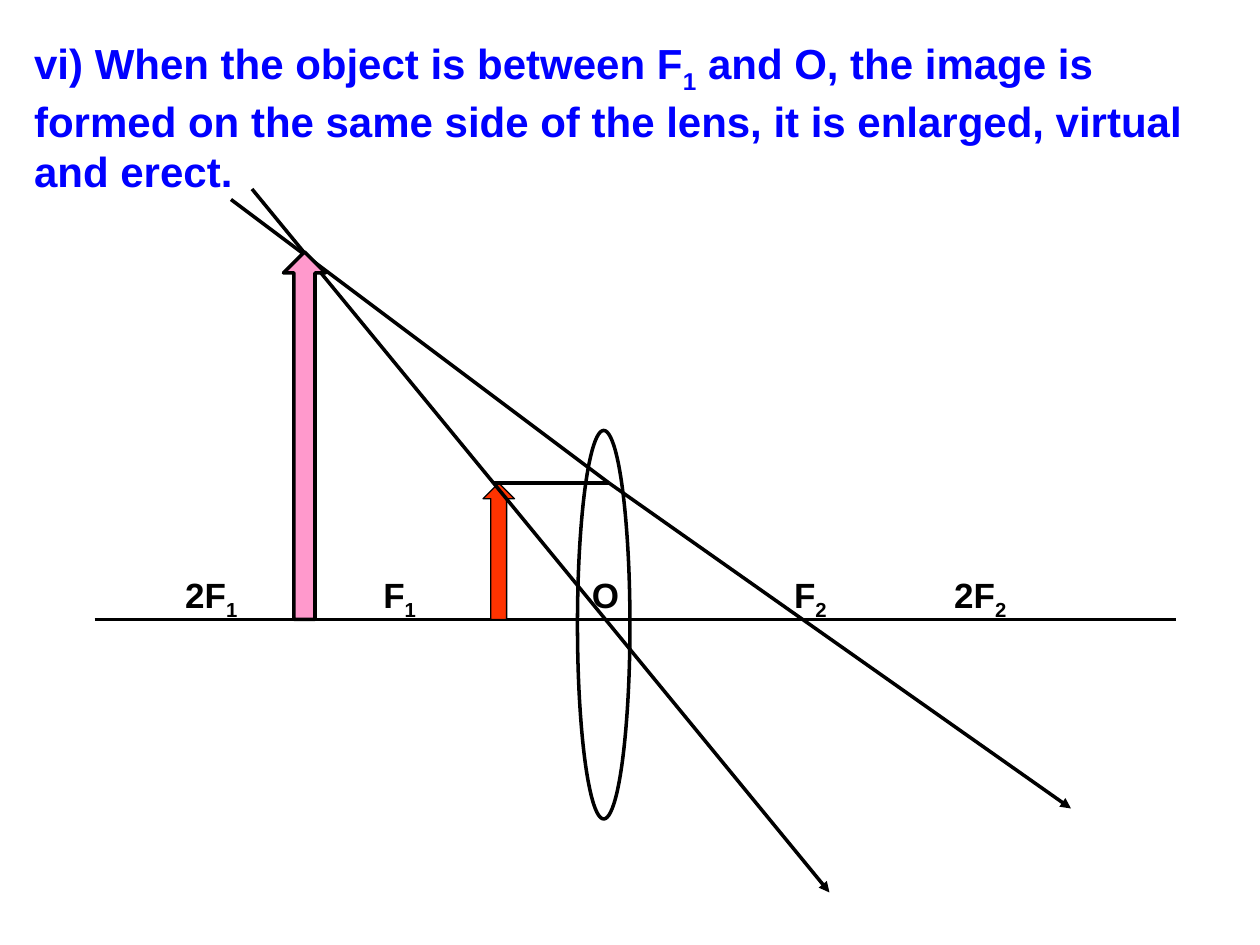
from dataclasses import dataclass

from lxml import etree
from pptx import Presentation
from pptx.dml.color import RGBColor
from pptx.enum.shapes import MSO_CONNECTOR, MSO_SHAPE
from pptx.oxml.ns import qn
from pptx.util import Pt

PX = 9525
STRAIGHT = MSO_CONNECTOR.STRAIGHT
ELLIPSE = MSO_SHAPE.OVAL
UP_ARROW = MSO_SHAPE.UP_ARROW


@dataclass(frozen=True)
class Theme:
    font: str = "Arial"
    heading: str = "0000FF"
    ink: str = "000000"
    object_fill: str = "FF3300"
    image_fill: str = "FF99CC"
    heading_size: int = 24
    label_size: int = 20
    thin: float = 0.75
    thick: float = 2


def write(frame, text, *, font, size, color, before=0):
    paragraph = frame.paragraphs[0]
    paragraph.space_before = Pt(before)
    for index, part in enumerate(text.split("_")):
        if not part:
            continue
        run = paragraph.add_run()
        run.text = part
        run.font.name = font
        run.font.size = Pt(size)
        run.font.bold = True
        run.font.color.rgb = RGBColor.from_string(color)
        if index % 2:
            run.font._element.set("baseline", "-25000")


class Diagram:
    def __init__(self, slide, theme):
        self.slide = slide
        self.theme = theme

    def text(self, words, left, top, width, height, size, color, inset=0, before=0):
        box = self.slide.shapes.add_textbox(*(PX * n for n in (left, top, width, height)))
        frame = box.text_frame
        frame.word_wrap = True
        frame.margin_left = frame.margin_right = PX * inset
        write(frame, words, font=self.theme.font, size=size, color=color, before=before)

    def outline(self, line, width):
        line.color.rgb = RGBColor.from_string(self.theme.ink)
        line.width = Pt(width)

    def shape(self, preset, left, top, width, height, line_width, fill=None):
        figure = self.slide.shapes.add_shape(
            preset, *(PX * n for n in (left, top, width, height)))
        figure.shadow.inherit = False
        if fill:
            figure.fill.solid()
            figure.fill.fore_color.rgb = RGBColor.from_string(fill)
        else:
            figure.fill.background()
        self.outline(figure.line, line_width)

    def line(self, start, end, arrow=False):
        ray = self.slide.shapes.add_connector(STRAIGHT, *(PX * n for n in (*start, *end)))
        self.outline(ray.line, self.theme.thick)
        properties = ray._element.spPr
        if arrow:
            etree.SubElement(properties.find(qn("a:ln")), qn("a:tailEnd"), type="triangle")
        etree.SubElement(properties, qn("a:effectLst"))


def main():
    deck = Presentation()
    deck.slide_width, deck.slide_height = PX * 960, PX * 720
    theme = Theme()
    diagram = Diagram(deck.slides.add_slide(deck.slide_layouts[6]), theme)

    diagram.text(
        "vi) When the object is between F_1_ and O, the image is formed on the same side "
        "of the lens, it is enlarged, virtual and erect.",
        16, 24, 936, 664, theme.heading_size, theme.heading, inset=10, before=4.8)

    axis = 472
    object_tip = (376, 368)
    lens_entry = (464, 368)

    diagram.shape(ELLIPSE, 440, 328, 40, 296, theme.thick)
    diagram.line((72, axis), (896, axis))
    for mark, left in (("2F_1", 141), ("F_1", 292), ("O", 451), ("F_2", 605), ("2F_2", 727)):
        diagram.text(mark, left, 432, 64, 41, theme.label_size, theme.ink)

    diagram.shape(UP_ARROW, 368, 368, 24, 104, theme.thin, theme.object_fill)
    diagram.line(object_tip, lens_entry)
    diagram.line(lens_entry, (816, 616), arrow=True)
    diagram.line(object_tip, (632, 680), arrow=True)
    diagram.line(lens_entry, (176, 152))
    diagram.line(object_tip, (192, 144))
    diagram.shape(UP_ARROW, 216, 192, 32, 280, theme.thick, theme.image_fill)

    deck.save("out.pptx")


if __name__ == "__main__":
    main()
